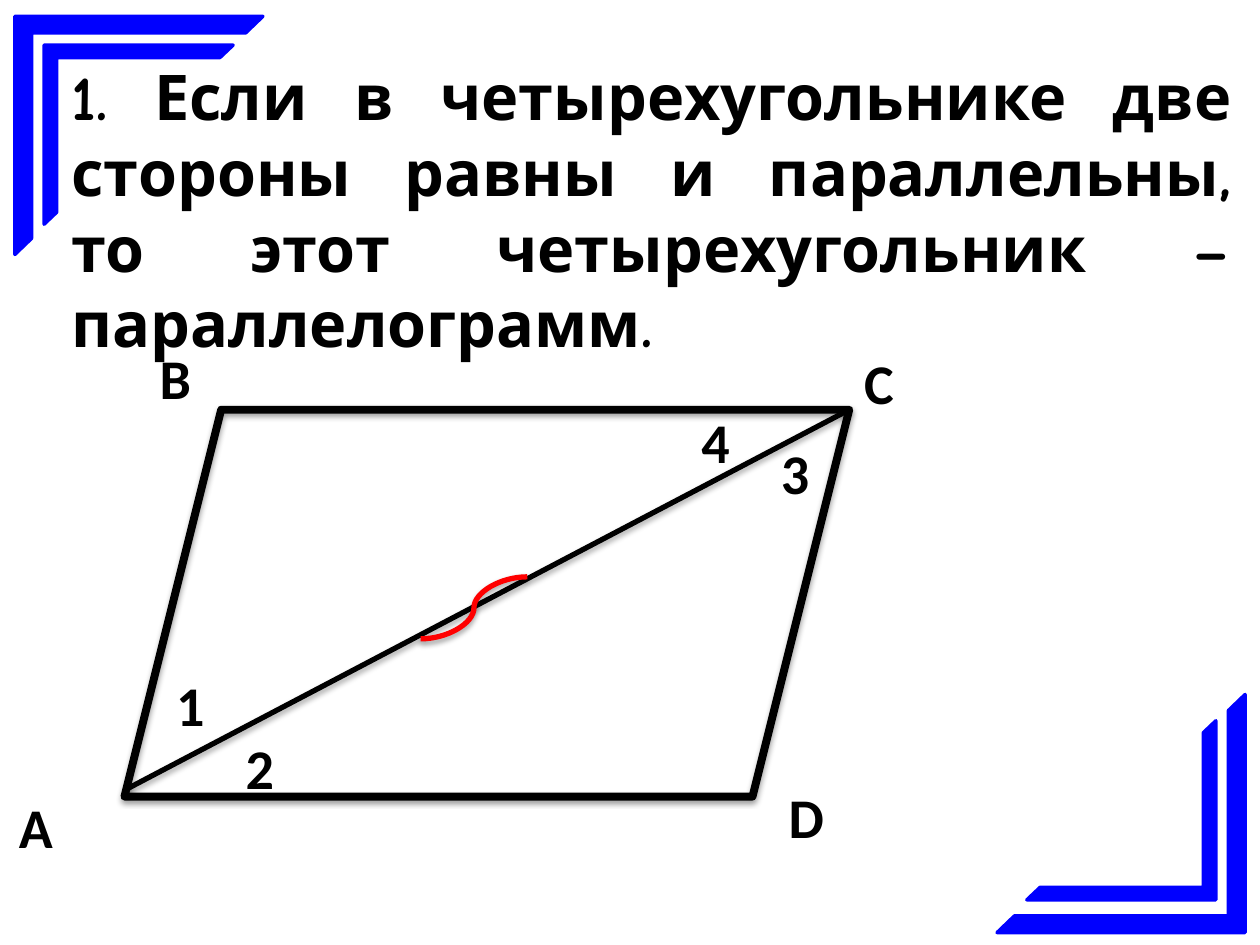
"""Build a geometry slide stating and drawing a parallelogram criterion."""
from pptx import Presentation
from pptx.dml.color import RGBColor
from pptx.enum.shapes import MSO_CONNECTOR as CONN, MSO_SHAPE as SHAPE
from pptx.enum.text import MSO_ANCHOR, MSO_AUTO_SIZE as FIT, PP_ALIGN
from pptx.oxml import parse_xml
from pptx.oxml.ns import nsdecls
from pptx.util import Cm, Pt

BLACK = RGBColor(0x00, 0x00, 0x00)
BLUE = RGBColor(0x00, 0x00, 0xFF)
RED = RGBColor(0xFF, 0x00, 0x00)

THEOREM = ("1. Если в четырехугольнике две стороны равны и параллельны, "
           "то этот четырехугольник – параллелограмм.")
THEOREM_BOX = (1.19, 1.04, 23.9, 9.5)
THEOREM_FONT = {"name": "Comic Neue", "size": Pt(36), "bold": True}
LABEL_FONT = {"name": "Calibri", "size": Pt(32), "bold": True}

OUTER, INNER = (5, 4.8), (3.81, 3.61)
CORNERS = [
    (0, [((0.3, 0.33), OUTER), ((0.89, 0.91), INNER)]),
    (180, [((20.1, 14), OUTER), ((20.7, 14.53), INNER)]),
]
FIGURE = (2.51, 8.26, 14.61, 7.8)
LINES = [
    (CONN.STRAIGHT, (2.51, 15.93, 17.12, 8.26), BLACK),
    (CONN.CURVE, (8.48, 12.88, 10.63, 11.63), RED),
]
LABELS = [
    ("А", 0.13, 15.85, 1.19), ("D", 15.65, 15.65, 1.22),
    ("C", 17.17, 6.91, 1.12), ("B", 2.97, 6.81, 1.14),
    ("1", 3.3, 13.39, 1.09), ("2", 4.7, 14.66, 1.09),
    ("3", 15.49, 8.71, 1.09), ("4", 13.89, 8.1, 1.09),
]
LABEL_HEIGHT = 1.63


def cm(values):
    return [Cm(v) for v in values]


def set_line(s, color, width):
    s.line.color.rgb = color
    s.line.width = Pt(width)


def add_shadow(s, alpha, dist):
    s._element.spPr.append(parse_xml(
        f'<a:effectLst {nsdecls("a")}><a:outerShdw blurRad="40000" '
        f'dist="{dist}" dir="5400000" rotWithShape="0">'
        f'<a:srgbClr val="{BLACK}"><a:alpha val="{alpha}000"/></a:srgbClr>'
        '</a:outerShdw></a:effectLst>'))


def add_text(tf, text, font):
    p = tf.paragraphs[0]
    r = p.add_run()
    r.text = text
    for name, value in font.items():
        setattr(r.font, name, value)
    r.font.color.rgb = BLACK
    return p, r


def add_theorem(slide):
    s = slide.shapes.title
    s.left, s.top, s.width, s.height = cm(THEOREM_BOX)
    tf = s.text_frame
    tf.word_wrap, tf.auto_size = True, FIT.SHAPE_TO_FIT_TEXT
    tf.vertical_anchor = MSO_ANCHOR.TOP
    p, r = add_text(tf, THEOREM, THEOREM_FONT)
    p.alignment = PP_ALIGN.JUSTIFY
    r.font._element.insert(0, parse_xml(
        f'<a:ln {nsdecls("a")} w="11430"><a:solidFill>'
        f'<a:srgbClr val="{BLACK}"/></a:solidFill></a:ln>'))


def add_corners(slide):
    for rotation, frames in CORNERS:
        group = slide.shapes.add_group_shape()
        for place, size in frames:
            s = group.shapes.add_shape(SHAPE.HALF_FRAME, *cm(place + size))
            s.adjustments[0], s.adjustments[1] = 0.07, 0.07
            s.rotation = rotation
            s.shadow.inherit = False
            s.fill.solid()
            s.fill.fore_color.rgb = BLUE
            set_line(s, BLUE, 2)


def add_figure(slide):
    s = slide.shapes.add_shape(SHAPE.PARALLELOGRAM, *cm(FIGURE))
    s.fill.background()
    set_line(s, BLACK, 4.5)
    add_shadow(s, 38, 20000)
    for kind, ends, color in LINES:
        line = slide.shapes.add_connector(kind, *cm(ends))
        set_line(line, color, 3)
        add_shadow(line, 35, 23000)


def add_labels(slide):
    for text, left, top, width in LABELS:
        s = slide.shapes.add_textbox(*cm((left, top, width, LABEL_HEIGHT)))
        tf = s.text_frame
        tf.word_wrap, tf.auto_size = False, FIT.SHAPE_TO_FIT_TEXT
        add_text(tf, text, LABEL_FONT)


def main():
    prs = Presentation()
    prs.slide_width, prs.slide_height = Cm(25.4), Cm(19.05)
    slide = prs.slides.add_slide(prs.slide_layouts[5])
    for add_part in (add_theorem, add_corners, add_figure, add_labels):
        add_part(slide)
    prs.save("out.pptx")


if __name__ == "__main__":
    main()
